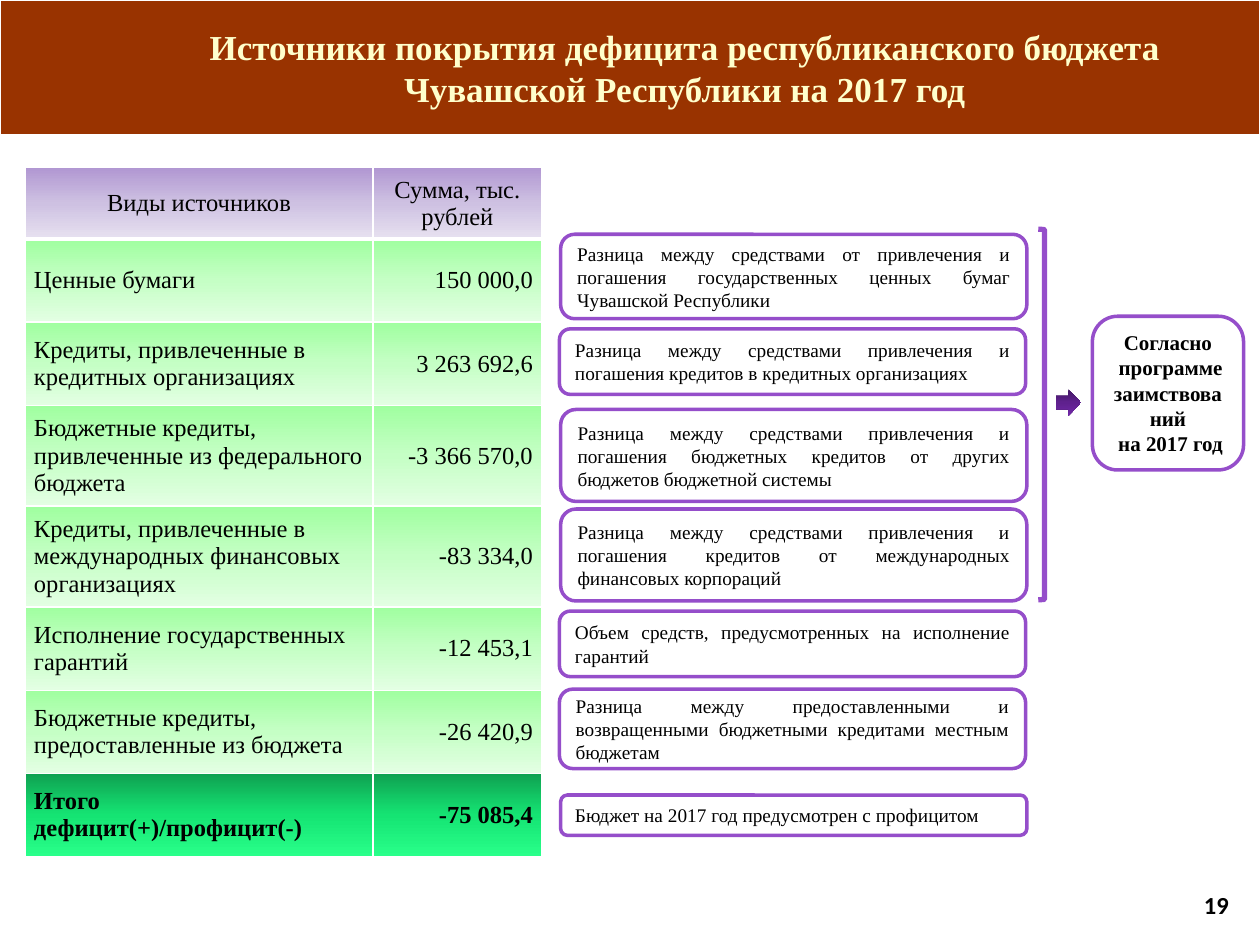
from copy import deepcopy

from lxml.etree import SubElement
from pptx import Presentation
from pptx.dml.color import RGBColor
from pptx.enum.shapes import MSO_SHAPE as Shape
from pptx.enum.text import MSO_ANCHOR as Anchor, MSO_AUTO_SIZE as AutoSize, PP_ALIGN as Align
from pptx.oxml.ns import qn
from pptx.util import Inches, Pt

BLACK = RGBColor(0x00, 0x00, 0x00)
WHITE = RGBColor(0xFF, 0xFF, 0xFF)
BROWN = RGBColor(0x99, 0x33, 0x00)
CREAM = RGBColor(0xFF, 0xFF, 0xCC)
PURPLE = RGBColor(0x95, 0x4E, 0xCA)
LILAC_FADE = (RGBColor(0xB1, 0x97, 0xD2), RGBColor(0xCE, 0xC1, 0xE2), RGBColor(0xE7, 0xE1, 0xF0))
MINT_FADE = (RGBColor(0xA0, 0xFF, 0xA0), RGBColor(0xC5, 0xFF, 0xC5), RGBColor(0xE3, 0xFF, 0xE3))
GREEN_FADE = (RGBColor(0x0F, 0xA1, 0x51), RGBColor(0x15, 0xE4, 0x73), RGBColor(0x29, 0xFF, 0x8A))
VIOLET_FADE = (RGBColor(0x43, 0x17, 0x64), RGBColor(0x5F, 0x21, 0x8E), RGBColor(0x71, 0x28, 0xA8))

SOURCES = [
    ("Виды источников", "Сумма, тыс. рублей"),
    ("Ценные бумаги", "150 000,0"),
    ("Кредиты, привлеченные в кредитных организациях", "3 263 692,6"),
    ("Бюджетные кредиты, привлеченные из федерального бюджета", "-3 366 570,0"),
    ("Кредиты, привлеченные в международных финансовых организациях", "-83 334,0"),
    ("Исполнение государственных гарантий", "-12 453,1"),
    ("Бюджетные кредиты, предоставленные из бюджета", "-26 420,9"),
    ("Итого дефицит(+)/профицит(-)", "-75 085,4"),
]
COLUMN_WIDTHS = (2.76, 1.34)
ROW_HEIGHTS = (0.53, 0.66, 0.66, 0.74, 0.74, 0.66, 0.66, 0.66)

# left, top, height, text
NOTES = [
    (4.45, 1.86, 0.67, "Разница между средствами от привлечения и погашения "
                       "государственных ценных бумаг Чувашской Республики"),
    (4.44, 2.61, 0.52, "Разница между средствами привлечения и погашения "
                       "кредитов в кредитных организациях"),
    (4.45, 3.25, 0.73, "Разница между средствами привлечения и погашения "
                       "бюджетных кредитов от других бюджетов бюджетной системы"),
    (4.45, 4.04, 0.73, "Разница между средствами привлечения и погашения "
                       "кредитов от международных финансовых корпораций"),
    (4.44, 4.85, 0.52, "Объем средств, предусмотренных на исполнение гарантий"),
    (4.44, 5.47, 0.63, "Разница между предоставленными и возвращенными "
                       "бюджетными кредитами местным бюджетам"),
    (4.45, 6.31, 0.32, "Бюджет на 2017 год предусмотрен с профицитом"),
]


def write(frame, *lines, size=14, color=BLACK, bold=False, align=Align.LEFT,
          anchor=Anchor.MIDDLE, font="Times New Roman"):
    frame.word_wrap = True
    frame.vertical_anchor = anchor
    for index, line in enumerate(lines):
        para = frame.add_paragraph() if index else frame.paragraphs[0]
        para.alignment = align
        span = para.add_run()
        span.text = line
        span.font.name = font
        span.font.size = Pt(size)
        span.font.bold = bold
        span.font.color.rgb = color


def fade(fill, element, colors):
    """Fill from top to bottom through three colours."""
    fill.gradient()
    fill.gradient_angle = 270
    stops = element.find(".//" + qn("a:gsLst"))
    stops.insert(1, deepcopy(stops[0]))
    for stop, color, position in zip(fill.gradient_stops, colors, (0, 0.5, 1)):
        stop.color.rgb = color
        stop.position = position


def outline_cell(cell, bottom=1):
    properties = cell._tc.get_or_add_tcPr()
    for side, width in (("L", 1), ("R", 1), ("T", 1), ("B", bottom)):
        line = SubElement(properties, qn(f"a:ln{side}"), w=str(Pt(width)))
        solid = SubElement(line, qn("a:solidFill"))
        SubElement(solid, qn("a:srgbClr"), val=str(WHITE))


class SlideBuilder:
    def __init__(self, page):
        self.page = page

    def shape(self, kind, left, top, width, height, fill=None, line=None, line_width=2):
        shape = self.page.shapes.add_shape(
            kind, Inches(left), Inches(top), Inches(width), Inches(height))
        shape.shadow.inherit = False
        if fill is None:
            shape.fill.background()
        elif isinstance(fill, RGBColor):
            shape.fill.solid()
            shape.fill.fore_color.rgb = fill
        else:
            fade(shape.fill, shape._element, fill)
        if line is not None:
            shape.line.color.rgb = line
            shape.line.width = Pt(line_width)
        else:
            shape.line.fill.background()
        return shape

    def text(self, left, top, width, height, text, **style):
        box = self.page.shapes.add_textbox(
            Inches(left), Inches(top), Inches(width), Inches(height))
        write(box.text_frame, text, **style)

    def note(self, left, top, width, height, *lines, **style):
        box = self.shape(Shape.ROUNDED_RECTANGLE, left, top, width, height, WHITE, PURPLE)
        write(box.text_frame, *lines, **style)
        box.text_frame.auto_size = AutoSize.SHAPE_TO_FIT_TEXT

    def table(self, left, top, rows, widths, heights):
        table = self.page.shapes.add_table(
            len(rows), len(widths), Inches(left), Inches(top),
            Inches(sum(widths)), Inches(sum(heights))).table
        for column, width in zip(table.columns, widths):
            column.width = Inches(width)
        for row, height in zip(table.rows, heights):
            row.height = Inches(height)
        last = len(rows) - 1
        for r, texts in enumerate(rows):
            colors = LILAC_FADE if r == 0 else GREEN_FADE if r == last else MINT_FADE
            for c, text in enumerate(texts):
                cell = table.cell(r, c)
                cell.margin_left = cell.margin_right = Inches(0.07)
                align = Align.CENTER if r == 0 else Align.RIGHT if c else Align.LEFT
                write(cell.text_frame, text, bold=r == last, align=align)
                cell.vertical_anchor = Anchor.MIDDLE
                outline_cell(cell, bottom=1 if r else 3)
                fade(cell.fill, cell._tc, colors)


def main():
    deck = Presentation()
    deck.slide_width, deck.slide_height = Inches(10), Inches(7.5)
    slide = SlideBuilder(deck.slides.add_slide(deck.slide_layouts[6]))

    slide.shape(Shape.RECTANGLE, 0, 0, 10, 1.07, BROWN, WHITE, 0.75)
    slide.text(1.38, 0, 8.11, 1.07,
               "Источники покрытия дефицита республиканского бюджета "
               "Чувашской Республики на 2017 год",
               size=20, color=CREAM, bold=True, align=Align.CENTER)
    slide.table(0.2, 1.33, SOURCES, COLUMN_WIDTHS, ROW_HEIGHTS)
    for left, top, height, text in NOTES:
        slide.note(left, top, 3.7, height, text, size=11, align=Align.JUSTIFY)

    slide.shape(Shape.RIGHT_BRACKET, 8.24, 1.82, 0.05, 2.94, line=PURPLE, line_width=3)
    slide.shape(Shape.RIGHT_ARROW, 8.38, 3.09, 0.2, 0.21, VIOLET_FADE)
    slide.note(8.67, 2.51, 1.2, 1.22,
               "Согласно", " программе заимствований", " на 2017 год",
               size=12, bold=True, align=Align.CENTER, anchor=Anchor.TOP)
    slide.text(8.7, 6.98, 1.15, 0.4, "19", bold=True, align=Align.RIGHT, font="Calibri")
    deck.save("out.pptx")


if __name__ == "__main__":
    main()
